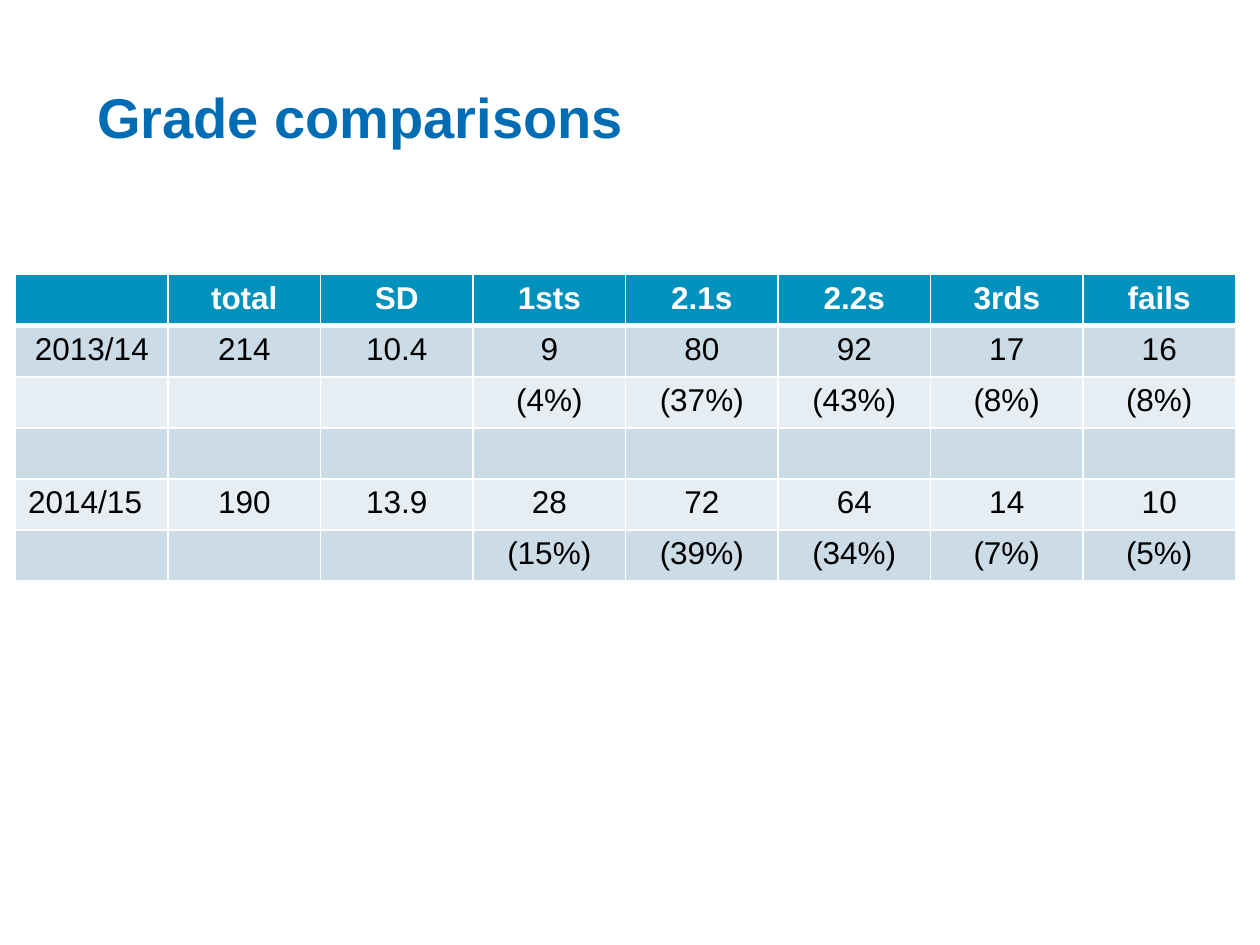
"""Build the grade comparisons slide."""
from dataclasses import dataclass

from lxml.etree import SubElement
from pptx import Presentation
from pptx.dml.color import RGBColor
from pptx.enum.text import MSO_ANCHOR, PP_ALIGN
from pptx.oxml.ns import qn
from pptx.util import Pt

TITLE = "Grade comparisons"
ROWS = [
    ["", "total", "SD", "1sts", "2.1s", "2.2s", "3rds", "fails"],
    ["2013/14", "214", "10.4", "9", "80", "92", "17", "16"],
    ["", "", "", "(4%)", "(37%)", "(43%)", "(8%)", "(8%)"],
    [""] * 8,
    ["2014/15", "190", "13.9", "28", "72", "64", "14", "10"],
    ["", "", "", "(15%)", "(39%)", "(34%)", "(7%)", "(5%)"],
]
LEFT_ALIGNED = {"2014/15"}
TITLE_BOX = (48.24, 43.2, 623.52, 46.08)
TABLE_LEFT, TABLE_TOP = 8.9, 156.9
COL_W, ROW_H = 87.15, 29.2


@dataclass(frozen=True)
class Theme:
    font: str = "Arial"
    title: str = "006CB4"
    header: str = "0092BC"
    bands: tuple = ("CCDCE7", "E7EEF3")
    text: str = "000000"
    white: str = "FFFFFF"
    title_size: int = 32
    cell_size: int = 18
    rule: int = 1
    header_rule: int = 3


THEME = Theme()


def add_run(p, text, size, color, bold):
    r = p.add_run()
    r.text = text
    r.font.name = THEME.font
    r.font.size = Pt(size)
    r.font.bold = bold
    r.font.color.rgb = RGBColor.from_string(color)


def add_borders(cell, widths):
    tc_pr = cell._tc.get_or_add_tcPr()
    for side, width in widths.items():
        ln = SubElement(tc_pr, qn(f"a:ln{side}"), w=str(Pt(width)))
        fill = SubElement(ln, qn("a:solidFill"))
        SubElement(fill, qn("a:srgbClr"), val=THEME.white)


def add_title(s):
    sp = s.shapes.title
    sp.left, sp.top, sp.width, sp.height = map(Pt, TITLE_BOX)
    tf = sp.text_frame
    tf.word_wrap = True
    tf.vertical_anchor = MSO_ANCHOR.MIDDLE
    p = tf.paragraphs[0]
    p.alignment = PP_ALIGN.LEFT
    add_run(p, TITLE, THEME.title_size, THEME.title, True)


def fill_cell(cell, text, row):
    header = row == 0
    add_borders(cell, {
        "L": THEME.rule,
        "R": THEME.rule,
        "T": THEME.header_rule if row == 1 else THEME.rule,
        "B": THEME.header_rule if header else THEME.rule,
    })
    cell.fill.solid()
    color = THEME.header if header else THEME.bands[(row - 1) % 2]
    cell.fill.fore_color.rgb = RGBColor.from_string(color)
    if text:
        p = cell.text_frame.paragraphs[0]
        p.alignment = PP_ALIGN.LEFT if text in LEFT_ALIGNED else PP_ALIGN.CENTER
        add_run(p, text, THEME.cell_size, THEME.white if header else THEME.text, header)


def add_grades(s):
    n_rows, n_cols = len(ROWS), len(ROWS[0])
    table = s.shapes.add_table(
        n_rows, n_cols, Pt(TABLE_LEFT), Pt(TABLE_TOP),
        Pt(COL_W * n_cols), Pt(ROW_H * n_rows)).table
    for col in table.columns:
        col.width = Pt(COL_W)
    for i, values in enumerate(ROWS):
        table.rows[i].height = Pt(ROW_H)
        for j, text in enumerate(values):
            fill_cell(table.cell(i, j), text, i)


def main():
    prs = Presentation()
    prs.slide_width, prs.slide_height = Pt(720), Pt(540)
    s = prs.slides.add_slide(prs.slide_layouts[5])
    add_title(s)
    add_grades(s)
    prs.save("out.pptx")


if __name__ == "__main__":
    main()
